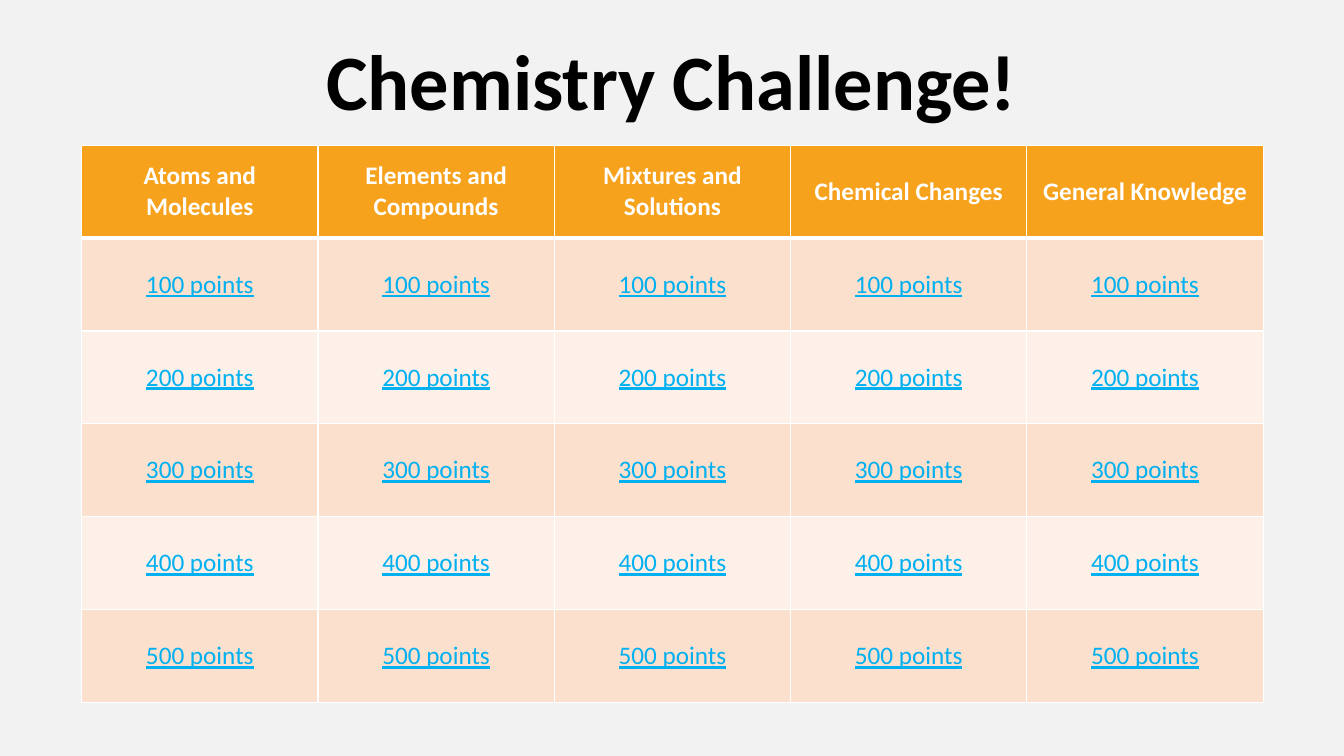
import dataclasses

import lxml.etree
import pptx
import pptx.dml.color
import pptx.enum.text
import pptx.oxml.ns
import pptx.util

Inches = pptx.util.Inches
WHITE = "FFFFFF"
TOPICS = [
    "Atoms and Molecules",
    "Elements and Compounds",
    "Mixtures and Solutions",
    "Chemical Changes",
    "General Knowledge",
]
POINTS = [100, 200, 300, 400, 500]


@dataclasses.dataclass
class Style:
    color: str
    font: dict


@dataclasses.dataclass
class Band:
    texts: list[str]
    fill: str
    style: Style
    top: float = 1
    base: float = 1


TITLE = Style("000000", {"size": pptx.util.Pt(56), "bold": True})
HEAD = Style(WHITE, {"size": pptx.util.Pt(18), "bold": True})
LINK = Style("00B0F0", {"size": pptx.util.Pt(18), "bold": False, "underline": True})


def rgb(code: str) -> pptx.dml.color.RGBColor:
    return pptx.dml.color.RGBColor.from_string(code)


def write(frame, text: str, style: Style) -> None:
    para = frame.paragraphs[0]
    para.alignment = pptx.enum.text.PP_ALIGN.CENTER
    run = para.add_run()
    run.text = text
    run.font.name = "Calibri"
    run.font.color.rgb = rgb(style.color)
    for key, value in style.font.items():
        setattr(run.font, key, value)


def border(cell, widths: dict[str, float]) -> None:
    props = cell._tc.get_or_add_tcPr()
    qn = pptx.oxml.ns.qn
    # Border lines come before the fill
    for spot, (side, width) in enumerate(widths.items()):
        line = lxml.etree.Element(qn(f"a:ln{side}"), w=str(pptx.util.Pt(width)))
        fill = lxml.etree.SubElement(line, qn("a:solidFill"))
        lxml.etree.SubElement(fill, qn("a:srgbClr"), val=WHITE)
        props.insert(spot, line)


def draw(cell, text: str, band: Band) -> None:
    cell.fill.solid()
    cell.fill.fore_color.rgb = rgb(band.fill)
    cell.vertical_anchor = pptx.enum.text.MSO_ANCHOR.MIDDLE
    write(cell.text_frame, text, band.style)
    border(cell, {"L": 1, "R": 1, "T": band.top, "B": band.base})


def main() -> None:
    deck = pptx.Presentation()
    deck.slide_width, deck.slide_height = Inches(13.33), Inches(7.5)
    slide = deck.slides.add_slide(deck.slide_layouts[6])
    slide.background.fill.solid()
    slide.background.fill.fore_color.rgb = rgb("F2F2F2")

    # Header row, then point rows in two alternating tints
    bands = [Band(TOPICS, "F6A21D", HEAD, base=3)]
    for i, score in enumerate(POINTS):
        tint = ("FBE0CD", "FDF0E8")[i % 2]
        top = 3 if i == 0 else 1
        bands.append(Band([f"{score} points"] * len(TOPICS), tint, LINK, top))

    # Game board
    wide, high = Inches(11.72), Inches(5.53)
    board = slide.shapes.add_table(
        len(bands), len(TOPICS), Inches(0.81), Inches(1.44), wide, high
    ).table
    for row, band in zip(board.rows, bands):
        for cell, text in zip(row.cells, band.texts):
            draw(cell, text, band)

    # Title
    box = slide.shapes.add_textbox(
        Inches(1.13), Inches(0.27), Inches(11.07), Inches(1.04)
    )
    box.text_frame.word_wrap = True
    box.text_frame.auto_size = pptx.enum.text.MSO_AUTO_SIZE.SHAPE_TO_FIT_TEXT
    write(box.text_frame, "Chemistry Challenge!", TITLE)

    deck.save("out.pptx")


if __name__ == "__main__":
    main()
